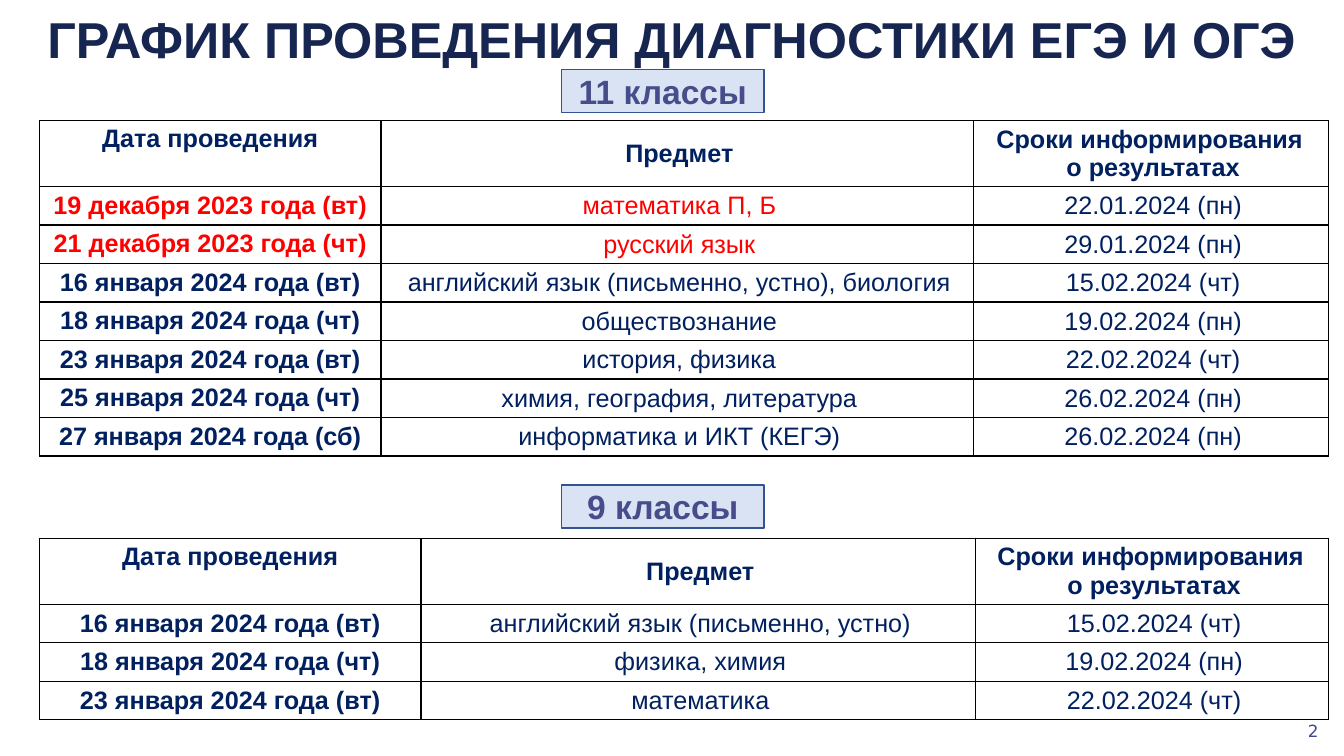
"""Builds the slide with the exam diagnostics schedule for grades 11 and 9."""
from dataclasses import dataclass

from lxml import etree
from pptx import Presentation
from pptx.dml.color import RGBColor
from pptx.enum.shapes import MSO_SHAPE
from pptx.enum.text import MSO_ANCHOR, MSO_AUTO_SIZE, PP_ALIGN
from pptx.oxml.ns import qn
from pptx.slide import Slide
from pptx.table import _Cell
from pptx.text.text import TextFrame
from pptx.util import Cm, Pt

RECTANGLE = MSO_SHAPE.RECTANGLE
TOP, MIDDLE = MSO_ANCHOR.TOP, MSO_ANCHOR.MIDDLE
CENTER, RIGHT = PP_ALIGN.CENTER, PP_ALIGN.RIGHT
NO_AUTOFIT = MSO_AUTO_SIZE.NONE


@dataclass(frozen=True)
class Theme:
    """Colours, fonts and type sizes of the slide."""
    title: str = "172551"
    badge_text: str = "464D8A"
    badge_fill: str = "DAE3F3"
    badge_line: str = "325491"
    text: str = "002060"
    urgent: str = "FF0000"
    number: str = "404888"
    cell: str = "FFFFFF"
    border: str = "000000"
    font: str = "Arial"
    number_font: str = "DejaVu Sans"
    title_size: int = 36
    badge_size: int = 24
    table_size: int = 18
    number_size: int = 12


@dataclass(frozen=True)
class Exam:
    """One line of a schedule."""
    date: str
    subject: str
    results: str
    urgent: bool = False


@dataclass(frozen=True)
class Schedule:
    """A grade badge and the table below it, in centimetres."""
    grade: str
    badge_top: float
    table_top: float
    columns: tuple[float, ...]
    exams: tuple[Exam, ...]


THEME = Theme()
TITLE = "ГРАФИК ПРОВЕДЕНИЯ ДИАГНОСТИКИ ЕГЭ И ОГЭ"
HEADINGS = ("Дата проведения", "Предмет", "Сроки информирования \nо результатах")
TABLE_LEFT, HEADING_HEIGHT, EXAM_HEIGHT = 0.99, 1.67, 0.97

SCHEDULES = (
    Schedule("11 классы", 1.75, 3.03, (8.61, 14.94, 8.94), (
        Exam("19 декабря 2023 года (вт)", "математика П, Б", "22.01.2024 (пн)", True),
        Exam("21 декабря 2023 года (чт)", "русский язык", "29.01.2024 (пн)", True),
        Exam("16 января 2024 года (вт)", "английский язык (письменно, устно), биология",
             "15.02.2024 (чт)"),
        Exam("18 января 2024 года (чт)", "обществознание", "19.02.2024 (пн)"),
        Exam("23 января 2024 года (вт)", "история, физика", "22.02.2024 (чт)"),
        Exam("25 января 2024 года (чт)", "химия, география, литература", "26.02.2024 (пн)"),
        Exam("27 января 2024 года (сб)", "информатика и ИКТ (КЕГЭ)", "26.02.2024 (пн)"),
    )),
    Schedule("9 классы", 12.22, 13.56, (9.62, 13.98, 8.89), (
        Exam("16 января 2024 года (вт)", "английский язык (письменно, устно)",
             "15.02.2024 (чт)"),
        Exam("18 января 2024 года (чт)", "физика, химия", "19.02.2024 (пн)"),
        Exam("23 января 2024 года (вт)", "математика", "22.02.2024 (чт)"),
    )),
)


def write(frame: TextFrame, text: str, size: int, color: str, bold: bool = True,
          font: str = THEME.font, align: PP_ALIGN = CENTER) -> None:
    """Fill a text frame with evenly formatted paragraphs."""
    frame.text = text
    font_format = {"name": font, "size": Pt(size), "bold": bold}
    for paragraph in frame.paragraphs:
        paragraph.alignment = align
        for run in paragraph.runs:
            for attribute, value in font_format.items():
                setattr(run.font, attribute, value)
            run.font.color.rgb = RGBColor.from_string(color)


def add_borders(cell: _Cell) -> None:
    """Draw a thin line on all four sides of a cell."""
    properties = cell._tc.get_or_add_tcPr()
    for position, side in enumerate(("lnL", "lnR", "lnT", "lnB")):
        line = etree.Element(qn(f"a:{side}"), w=str(Pt(1)))
        fill = etree.SubElement(line, qn("a:solidFill"))
        etree.SubElement(fill, qn("a:srgbClr"), val=THEME.border)
        properties.insert(position, line)


def fill_cell(cell: _Cell, text: str, color: str, bold: bool, is_date: bool) -> None:
    """Write and format one table cell."""
    cell_format = {
        "margin_left": Cm(0 if is_date else 0.1),
        "margin_right": Cm(0),
        "margin_top": Cm(0.12 if is_date else 0.08),
        "margin_bottom": Cm(0.04 if is_date else 0.08),
        "vertical_anchor": TOP if is_date else MIDDLE,
    }
    for attribute, value in cell_format.items():
        setattr(cell, attribute, value)
    cell.fill.solid()
    cell.fill.fore_color.rgb = RGBColor.from_string(THEME.cell)
    add_borders(cell)
    write(cell.text_frame, text, THEME.table_size, color, bold)


def add_title(slide: Slide) -> None:
    """Place the heading in the title placeholder."""
    title = slide.shapes.title
    place = {"left": Cm(0), "top": Cm(0.08), "width": Cm(33.87), "height": Cm(1.8)}
    for attribute, value in place.items():
        setattr(title, attribute, value)
    frame = title.text_frame
    write(frame, TITLE, THEME.title_size, THEME.title)
    frame.auto_size = NO_AUTOFIT
    frame.vertical_anchor = TOP


def add_badge(slide: Slide, schedule: Schedule) -> None:
    """Draw the framed grade label above a table."""
    badge = slide.shapes.add_shape(
        RECTANGLE, Cm(14.15), Cm(schedule.badge_top), Cm(5.11), Cm(1.09))
    badge.shadow.inherit = False
    badge.fill.solid()
    badge.fill.fore_color.rgb = RGBColor.from_string(THEME.badge_fill)
    badge.line.color.rgb = RGBColor.from_string(THEME.badge_line)
    badge.line.width = Pt(1)
    badge.text_frame.vertical_anchor = MIDDLE
    write(badge.text_frame, schedule.grade, THEME.badge_size, THEME.badge_text)


def add_schedule(slide: Slide, schedule: Schedule) -> None:
    """Draw the table of exam dates."""
    heights = [HEADING_HEIGHT] + [EXAM_HEIGHT] * len(schedule.exams)
    table = slide.shapes.add_table(
        len(heights), len(schedule.columns), Cm(TABLE_LEFT), Cm(schedule.table_top),
        Cm(sum(schedule.columns)), Cm(sum(heights))).table
    table.first_row = table.horz_banding = False
    for column, width in zip(table.columns, schedule.columns):
        column.width = Cm(width)
    for row, height in zip(table.rows, heights):
        row.height = Cm(height)
    for index, heading in enumerate(HEADINGS):
        fill_cell(table.cell(0, index), heading, THEME.text, True, index == 0)
    for line, exam in enumerate(schedule.exams, start=1):
        accent = THEME.urgent if exam.urgent else THEME.text
        fill_cell(table.cell(line, 0), exam.date, accent, True, True)
        fill_cell(table.cell(line, 1), exam.subject, accent, False, False)
        fill_cell(table.cell(line, 2), exam.results, THEME.text, False, False)


def add_slide_number(slide: Slide) -> None:
    """Write the number in the lower right corner."""
    frame = slide.shapes.add_textbox(Cm(25.86), Cm(17.91), Cm(7.62), Cm(1.02)).text_frame
    frame.word_wrap = True
    frame.vertical_anchor = MIDDLE
    write(frame, "2", THEME.number_size, THEME.number, False, THEME.number_font, RIGHT)


def main() -> None:
    """Build and save the presentation."""
    presentation = Presentation()
    presentation.slide_width, presentation.slide_height = Cm(33.87), Cm(19.05)
    slide = presentation.slides.add_slide(presentation.slide_layouts[5])
    add_title(slide)
    for schedule in SCHEDULES:
        add_schedule(slide, schedule)
        add_badge(slide, schedule)
    add_slide_number(slide)
    presentation.save("out.pptx")


if __name__ == "__main__":
    main()
